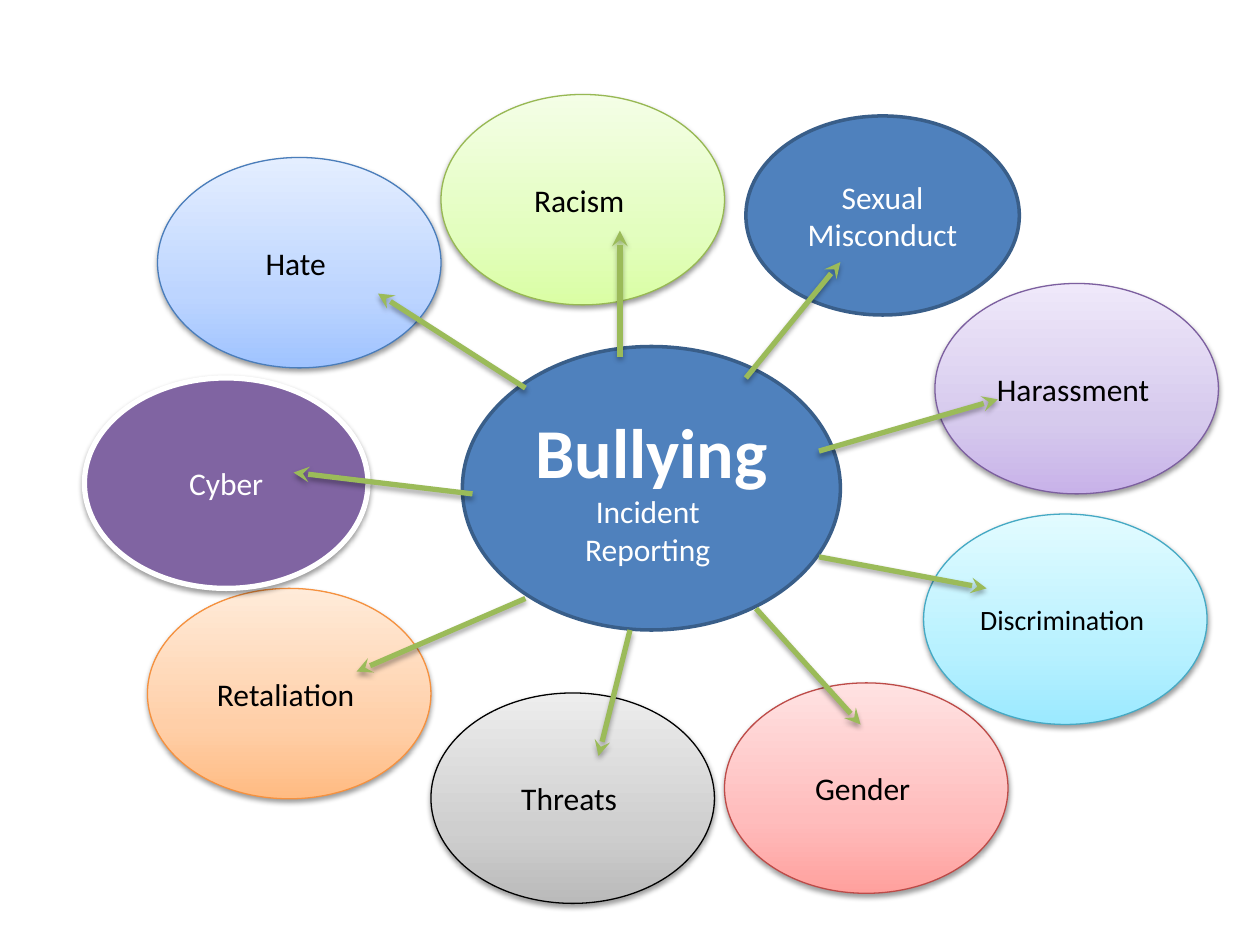
from lxml.etree import SubElement
from pptx import Presentation
from pptx.dml.color import RGBColor
from pptx.enum.shapes import MSO_CONNECTOR, MSO_SHAPE
from pptx.enum.text import MSO_ANCHOR, PP_ALIGN
from pptx.oxml.ns import qn
from pptx.util import Inches, Pt

FONT = "Calibri"
WHITE = RGBColor(0xFF, 0xFF, 0xFF)
BLACK = RGBColor(0, 0, 0)
BLUE = RGBColor(0x4F, 0x81, 0xBD)
NAVY = RGBColor(0x39, 0x5E, 0x89)
PURPLE = RGBColor(0x80, 0x64, 0xA2)
GREEN = RGBColor(0x9B, 0xBB, 0x59)

SIZE = (2.25, 1.67)
HUB = (3.67, 2.75, 3, 2.25)
HUB_TEXT = [("Bullying", 40, True), ("Incident \vReporting ", 18, False)]
SOFT = [
    ("Hate ", 18, 1.25, 1.25, "4A7DBA", ("9FC3FF", "BDD5FF", "E4EEFF")),
    ("Gender ", 18, 5.75, 5.42, "BD4B48", ("FFA09D", "FFBCBC", "FFE2E2")),
    ("Discrimination ", 16, 7.33, 4.08, "45A9C4", ("9BE9FF", "B8F1FF", "E2FBFF")),
    ("Harassment ", 18, 7.42, 2.25, "7C5F9F", ("C8B2E9", "D6CAED", "EFE8FA")),
    ("Racism ", 18, 3.5, 0.75, "97B853", ("DAFEA4", "E3FEBF", "F4FEE6")),
    ("Retaliation ", 18, 1.17, 4.67, "F5913F", ("FFBB82", "FFCFA8", "FFEBD9")),
    ("Threats ", 18, 3.42, 5.5, "000000", ("BABABA", "CFCFCF", "EDEDED")),
]
ARROWS = [
    ((4.92, 2.83), (4.92, 1.83)),
    ((3.75, 3.92), (2.33, 3.75)),
    ((6.5, 4.42), (7.83, 4.67)),
    ((6.5, 3.58), (7.92, 3.17)),
    ((4.17, 3.08), (3, 2.33)),
    ((4.17, 4.75), (2.83, 5.33)),
    ((5, 5), (4.75, 6)),
    ((6, 4.83), (6.83, 5.75)),
]
LAST = ((5.92, 3), (6.67, 2.08))


def add(parent, tag, **attrs):
    return SubElement(parent, qn(tag), {k: str(v) for k, v in attrs.items()})


def shade(shape, alpha, dist):
    props = shape._element.spPr
    for old in props.findall(qn("a:effectLst")):
        props.remove(old)
    drop = add(add(props, "a:effectLst"), "a:outerShdw", blurRad=Pt(3.1),
               dist=Pt(dist), dir=5400000, rotWithShape=0)
    tint = add(drop, "a:srgbClr", val="000000")
    add(tint, "a:alpha", val=alpha * 1000)


def blend(shape, colors):
    shape.fill.gradient()
    shape.fill.gradient_angle = 90
    stops = shape._element.spPr.find(qn("a:gradFill")).find(qn("a:gsLst"))
    for old in list(stops):
        stops.remove(old)
    for pos, color in zip((0, 35, 100), colors):
        add(add(stops, "a:gs", pos=pos * 1000), "a:srgbClr", val=color)


def oval(slide, box, lines, ink, edge, width, fill):
    shape = slide.shapes.add_shape(MSO_SHAPE.OVAL, *map(Inches, box))
    shape.shadow.inherit = False
    if isinstance(fill, RGBColor):
        shape.fill.solid()
        shape.fill.fore_color.rgb = fill
    else:
        blend(shape, fill)
    shape.line.color.rgb = edge
    shape.line.width = Pt(width)
    frame = shape.text_frame
    frame.word_wrap = True
    frame.vertical_anchor = MSO_ANCHOR.MIDDLE
    frame.text = "\n".join(text for text, _, _ in lines)
    for para, (_, size, bold) in zip(frame.paragraphs, lines):
        para.alignment = PP_ALIGN.CENTER
        for run in para.runs:
            font = run.font
            font.name, font.size, font.bold = FONT, Pt(size), bold
            font.color.rgb = ink
    return shape


def arrow(slide, start, end):
    line = slide.shapes.add_connector(
        MSO_CONNECTOR.STRAIGHT, *map(Inches, start + end))
    line.line.color.rgb = GREEN
    line.line.width = Pt(3)
    add(line.line._get_or_add_ln(), "a:tailEnd", type="stealth")
    shade(line, 35, 1.8)


def main():
    deck = Presentation()
    deck.slide_width, deck.slide_height = Inches(10), Inches(7.5)
    slide = deck.slides.add_slide(deck.slide_layouts[6])
    oval(slide, HUB, HUB_TEXT, WHITE, NAVY, 2, BLUE)
    *early, threats = SOFT

    def soft(item):
        text, size, left, top, edge, colors = item
        shade(oval(slide, (left, top, *SIZE), [(text, size, False)], BLACK,
                   RGBColor.from_string(edge), 0.75, colors), 38, 1.6)

    for item in early:
        soft(item)
    shade(oval(slide, (0.67, 3, *SIZE), [("Cyber", 18, False)],
               WHITE, WHITE, 3, PURPLE), 38, 1.6)
    soft(threats)
    for start, end in ARROWS:
        arrow(slide, start, end)
    oval(slide, (5.92, 0.92, 2.17, 1.58), [("Sexual Misconduct", 18, False)],
         WHITE, NAVY, 2, BLUE)
    arrow(slide, *LAST)
    deck.save("out.pptx")


if __name__ == "__main__":
    main()
